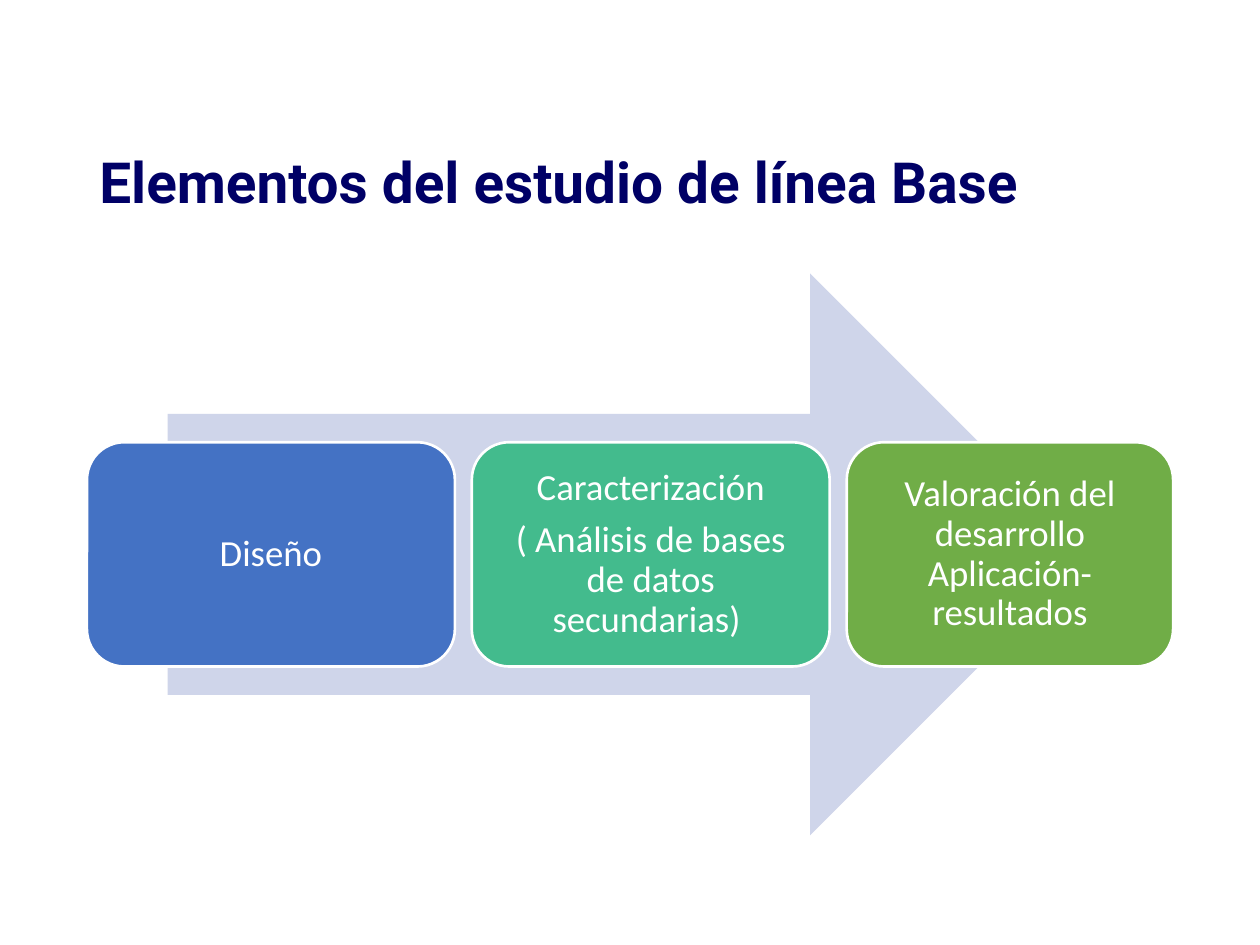
from dataclasses import dataclass

from pptx import Presentation
from pptx.dml.color import RGBColor
from pptx.enum.shapes import MSO_SHAPE
from pptx.enum.text import MSO_ANCHOR, PP_ALIGN
from pptx.util import Inches, Pt

RIGHT_ARROW = MSO_SHAPE.RIGHT_ARROW
ROUNDED = MSO_SHAPE.ROUNDED_RECTANGLE
MIDDLE = MSO_ANCHOR.MIDDLE
CENTER = PP_ALIGN.CENTER

COLORS = {
    "title": "000066",
    "arrow": "CFD5EA",
    "design": "4472C4",
    "characterization": "43BB8D",
    "assessment": "70AD47",
    "white": "FFFFFF",
}

MARGIN = 0.69
STAGE_TOP, STAGE_HEIGHT, STAGE_GAP = 3.51, 1.78, 0.135
TEXT_INSET = Inches(0.09)


@dataclass
class Stage:
    width: float
    color: str
    lines: list[str]


STAGES = [
    Stage(2.92, "design", ["Diseño"]),
    Stage(2.84, "characterization",
          ["Caracterización", "( Análisis de bases de datos secundarias) "]),
    Stage(2.59, "assessment", ["Valoración del desarrollo Aplicación-resultados"]),
]


def rgb(name: str) -> RGBColor:
    return RGBColor.from_string(COLORS[name])


def style_font(paragraph, family: str, size: float, color: str) -> None:
    paragraph.line_spacing = 0.9
    paragraph.font.name = family
    paragraph.font.size = Pt(size)
    paragraph.font.color.rgb = rgb(color)


def add_title(slide, text: str) -> None:
    frame = slide.shapes.add_textbox(
        Inches(MARGIN), Inches(1.09), Inches(8.62), Inches(0.76)).text_frame
    frame.word_wrap = True
    frame.vertical_anchor = MIDDLE
    paragraph = frame.paragraphs[0]
    paragraph.text = text
    style_font(paragraph, "Roboto", 32.4, "title")
    paragraph.font.bold = True


def add_process_arrow(slide) -> None:
    arrow = slide.shapes.add_shape(
        RIGHT_ARROW, Inches(1.33), Inches(2.17), Inches(7.33), Inches(4.46))
    arrow.shadow.inherit = False
    arrow.fill.solid()
    arrow.fill.fore_color.rgb = rgb("arrow")
    arrow.line.fill.background()


def add_stage(slide, stage: Stage, left: float) -> None:
    box = slide.shapes.add_shape(
        ROUNDED, Inches(left), Inches(STAGE_TOP),
        Inches(stage.width), Inches(STAGE_HEIGHT))
    box.shadow.inherit = False
    box.fill.solid()
    box.fill.fore_color.rgb = rgb(stage.color)
    box.line.color.rgb = rgb("white")
    box.line.width = Pt(1.5)

    frame = box.text_frame
    frame.word_wrap = True
    frame.vertical_anchor = MIDDLE
    frame.margin_left = frame.margin_right = TEXT_INSET
    frame.margin_top = frame.margin_bottom = TEXT_INSET
    frame.text = "\n".join(stage.lines)
    for paragraph in frame.paragraphs:
        paragraph.alignment = CENTER
        paragraph.space_after = Pt(7.35)
        style_font(paragraph, "Calibri", 21, "white")


def main() -> None:
    prs = Presentation()
    prs.slide_width, prs.slide_height = Inches(10), Inches(7.5)
    slide = prs.slides.add_slide(prs.slide_layouts[6])

    add_title(slide, "Elementos del estudio de línea Base")
    add_process_arrow(slide)
    left = MARGIN
    for stage in STAGES:
        add_stage(slide, stage, left)
        left += stage.width + STAGE_GAP

    prs.save("out.pptx")


if __name__ == "__main__":
    main()
